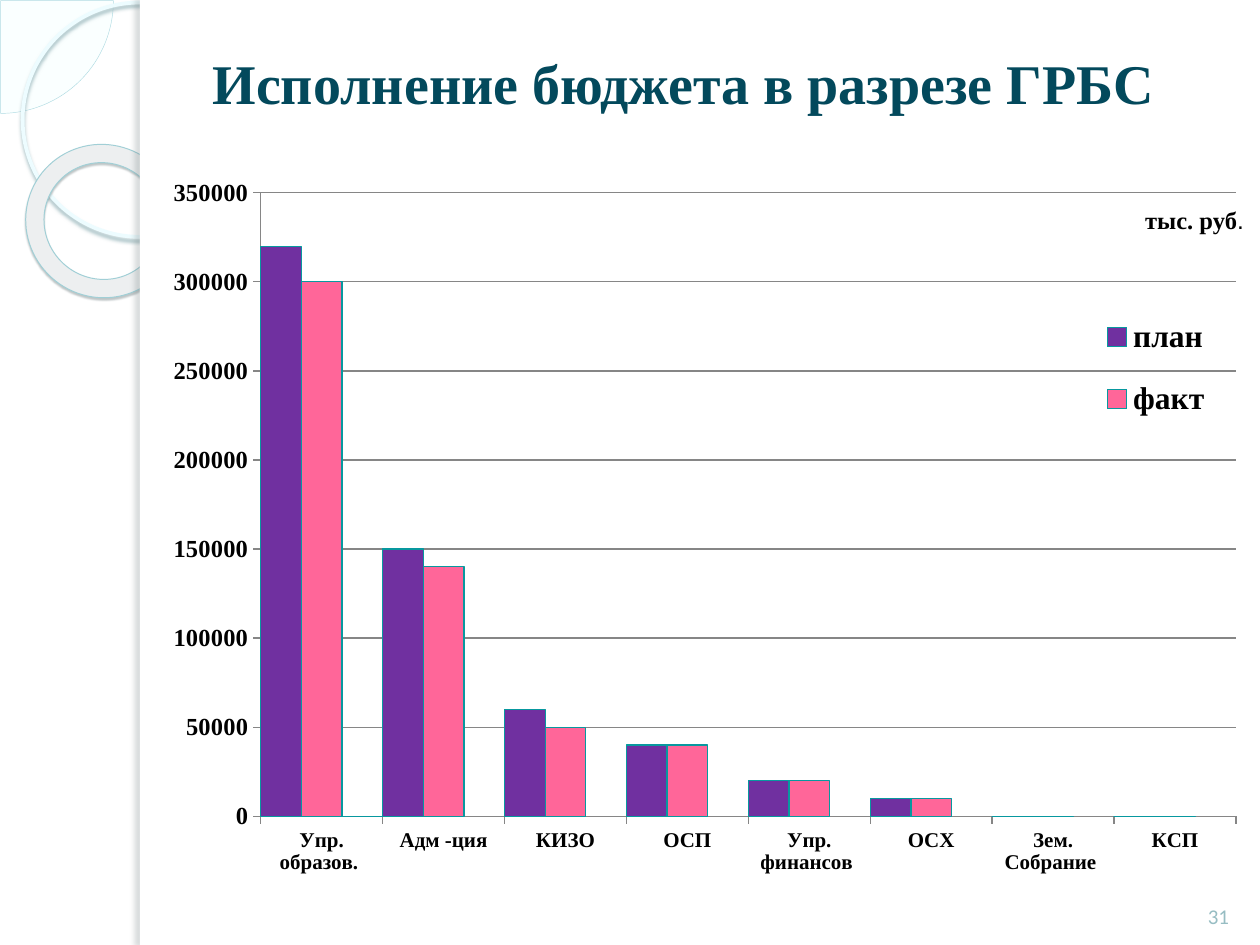
from dataclasses import dataclass
from typing import Any, Optional

from pptx import Presentation
from pptx.chart.data import CategoryChartData
from pptx.dml.color import RGBColor
from pptx.enum.chart import XL_CHART_TYPE as Kind, XL_LEGEND_POSITION as Side, XL_TICK_MARK as Tick
from pptx.enum.shapes import MSO_SHAPE as Form
from pptx.enum.text import MSO_ANCHOR as Anchor, PP_ALIGN as Align
from pptx.oxml import parse_xml
from pptx.oxml.ns import nsdecls, qn
from pptx.util import Inches, Pt

WHITE = RGBColor(0xFF, 0xFF, 0xFF)
BLACK = RGBColor(0, 0, 0)
NAVY = RGBColor(0x03, 0x49, 0x5C)
MIST = RGBColor(0x97, 0xBD, 0xC3)
ICE = RGBColor(0xFA, 0xFF, 0xFF)
PALE = RGBColor(0xED, 0xFC, 0xFF)
RING = RGBColor(0xED, 0xEF, 0xF0)
RIM = RGBColor(0xA1, 0xCF, 0xD6)
EDGE = RGBColor(0xAF, 0xDB, 0xE2)
GRID = RGBColor(0x86, 0x86, 0x86)
TEAL = RGBColor(0x08, 0x98, 0x9F)
PLUM = RGBColor(0x70, 0x30, 0xA0)
PINK = RGBColor(0xFF, 0x66, 0x99)
CYAN = RGBColor(0x0B, 0xD0, 0xD9)
SERIF = "Times New Roman"
FRAME = (1.08, 1.42, 8.75, 5.75)


@dataclass
class Shade:
    tint: str
    alpha: int
    blur: float
    dist: float
    angle: int


@dataclass
class Deco:
    form: Any
    box: tuple
    fill: Optional[RGBColor] = None
    line: Optional[RGBColor] = None
    width: float = 0
    turn: float = 0
    adj: tuple = ()
    shade: Optional[Shade] = None


@dataclass
class Run:
    text: str
    size: int
    tint: RGBColor
    face: str = SERIF
    bold: bool = True


@dataclass
class Label:
    box: tuple
    runs: tuple
    align: Any = Align.CENTER
    anchor: Any = Anchor.MIDDLE
    wrap: bool = True


@dataclass
class Bars:
    name: str
    vals: tuple
    tint: RGBColor


DECOS = (
    Deco(Form.PIE, (-0.89, -0.89, 1.79, 1.79), ICE, EDGE, 0.25, adj=(0, 54)),
    Deco(Form.OVAL, (0.18, 0.02, 1.86, 1.86), None, PALE, 2.15,
         shade=Shade("9CB9BE", 85, 2, 2, 90)),
    Deco(Form.DONUT, (0.2, 1.15, 1.23, 1.21), RING, RIM, 0.58, 38.6, (0.12,),
         Shade("4B5E61", 35, 1, 1.2, 75)),
    Deco(Form.RECTANGLE, (1.11, 0, 8.89, 7.5), WHITE),
    Deco(Form.RECTANGLE, (1.11, 0, 0.08, 7.5), WHITE,
         shade=Shade("6C7A7C", 25, 3, 3, 180)),
)
LABELS = (
    Label((1.08, 0.3, 8.69, 0.7), (Run("Исполнение бюджета в разрезе ГРБС", 32, NAVY),)),
    Label((9.42, 6.9, 0.5, 0.52), (Run("31", 12, MIST, "Calibri", False),),
          anchor=Anchor.BOTTOM),
    Label((8.99, 1.58, 0.99, 0.34),
          (Run("тыс. руб", 14, BLACK), Run(".", 14, BLACK, "Arial", False)),
          Align.LEFT, Anchor.TOP, False),
)
CATS = ("Упр. образов. ", "Адм -ция", "КИЗО", "ОСП", "Упр. финансов ", "ОСХ",
        "Зем. Собрание ", "КСП")
BARS = (
    Bars("план", (320000, 150000, 60000, 40000, 20000, 10000, 0, 0), PLUM),
    Bars("факт", (300000, 140000, 50000, 40000, 20000, 10000, 0, 0), PINK),
    Bars("Series 3", (0,) + (None,) * 7, CYAN),
)


def style(item: Any, **vals: Any) -> None:
    for key, val in vals.items():
        setattr(item, key, val)


def ink(font: Any, size: float, tint: RGBColor, face: str = SERIF, bold: bool = True) -> None:
    style(font, size=Pt(size), name=face, bold=bold)
    font.color.rgb = tint


def paint(fill: Any, tint: Optional[RGBColor]) -> None:
    if tint is None:
        fill.background()
    else:
        fill.solid()
        fill.fore_color.rgb = tint


def cast(shape: Any, shade: Shade) -> None:
    old = shape._element.spPr.find(qn("a:effectLst"))
    new = parse_xml(
        f'<a:effectLst {nsdecls("a")}><a:outerShdw blurRad="{Pt(shade.blur)}" '
        f'dist="{Pt(shade.dist)}" dir="{shade.angle * 60000}" algn="tl" rotWithShape="0">'
        f'<a:srgbClr val="{shade.tint}"><a:alpha val="{shade.alpha * 1000}"/></a:srgbClr>'
        '</a:outerShdw></a:effectLst>')
    old.getparent().replace(old, new)


def draw(slide: Any, deco: Deco) -> None:
    shape = slide.shapes.add_shape(deco.form, *map(Inches, deco.box))
    shape.shadow.inherit = False
    shape.rotation = deco.turn
    for i, val in enumerate(deco.adj):
        shape.adjustments[i] = val
    paint(shape.fill, deco.fill)
    paint(shape.line.fill, deco.line)
    if deco.line is not None:
        shape.line.width = Pt(deco.width)
    if deco.shade:
        cast(shape, deco.shade)


def write(slide: Any, label: Label) -> None:
    frame = slide.shapes.add_textbox(*map(Inches, label.box)).text_frame
    style(frame, word_wrap=label.wrap, vertical_anchor=label.anchor)
    para = frame.paragraphs[0]
    para.alignment = label.align
    for part in label.runs:
        run = para.add_run()
        run.text = part.text
        ink(run.font, part.size, part.tint, part.face, part.bold)


def place(node: Any, spot: int, box: tuple, inner: bool = False) -> None:
    for old in node.findall(qn("c:layout")):
        node.remove(old)
    target = '<c:layoutTarget val="inner"/>' if inner else ""
    modes = '<c:xMode val="edge"/><c:yMode val="edge"/>'
    sizes = "".join(f'<c:{key} val="{val / full:.4f}"/>'
                    for key, val, full in zip("xywh", box, FRAME[2:] * 2))
    node.insert(spot, parse_xml(
        f'<c:layout {nsdecls("c")}><c:manualLayout>{target}{modes}{sizes}'
        '</c:manualLayout></c:layout>'))


def plot(slide: Any) -> None:
    data = CategoryChartData()
    data.categories = CATS
    for bars in BARS:
        data.add_series(bars.name, bars.vals)
    chart = slide.shapes.add_chart(Kind.COLUMN_CLUSTERED, *map(Inches, FRAME), data).chart
    style(chart, has_title=False, has_legend=True)
    ink(chart.font, 18, BLACK, "Calibri", False)
    group = chart.plots[0]
    style(group, gap_width=0, overlap=0, vary_by_categories=False)
    for bars, series in zip(BARS, group.series):
        paint(series.format.fill, bars.tint)
        paint(series.format.line.fill, TEAL)
        series.format.line.width = Pt(0.75)
    for axis, size in ((chart.category_axis, 12), (chart.value_axis, 14)):
        ink(axis.tick_labels.font, size, BLACK)
        style(axis, major_tick_mark=Tick.OUTSIDE, minor_tick_mark=Tick.NONE)
        paint(axis.format.line.fill, GRID)
    value = chart.value_axis
    style(value, minimum_scale=0, maximum_scale=350000, major_unit=50000,
          has_major_gridlines=True)
    paint(value.major_gridlines.format.line.fill, GRID)
    style(value.tick_labels, number_format="0", number_format_is_linked=False)
    place(group._element.getparent(), 0, (0.99, 0.11, 7.74, 4.95), True)
    legend = chart.legend
    style(legend, position=Side.RIGHT, include_in_layout=False)
    ink(legend.font, 18, BLACK)
    place(legend._element, 1, (7.57, 0.9, 1.05, 1.2))
    legend._element.insert(1, parse_xml(
        f'<c:legendEntry {nsdecls("c")}><c:idx val="2"/><c:delete val="1"/></c:legendEntry>'))


def main() -> None:
    """Build the budget execution slide."""
    deck = Presentation()
    style(deck, slide_width=Inches(10), slide_height=Inches(7.5))
    slide = deck.slides.add_slide(deck.slide_layouts[6])
    for deco in DECOS:
        draw(slide, deco)
    title, *notes = LABELS
    write(slide, title)
    plot(slide)
    for label in notes:
        write(slide, label)
    deck.save("out.pptx")


if __name__ == "__main__":
    main()
